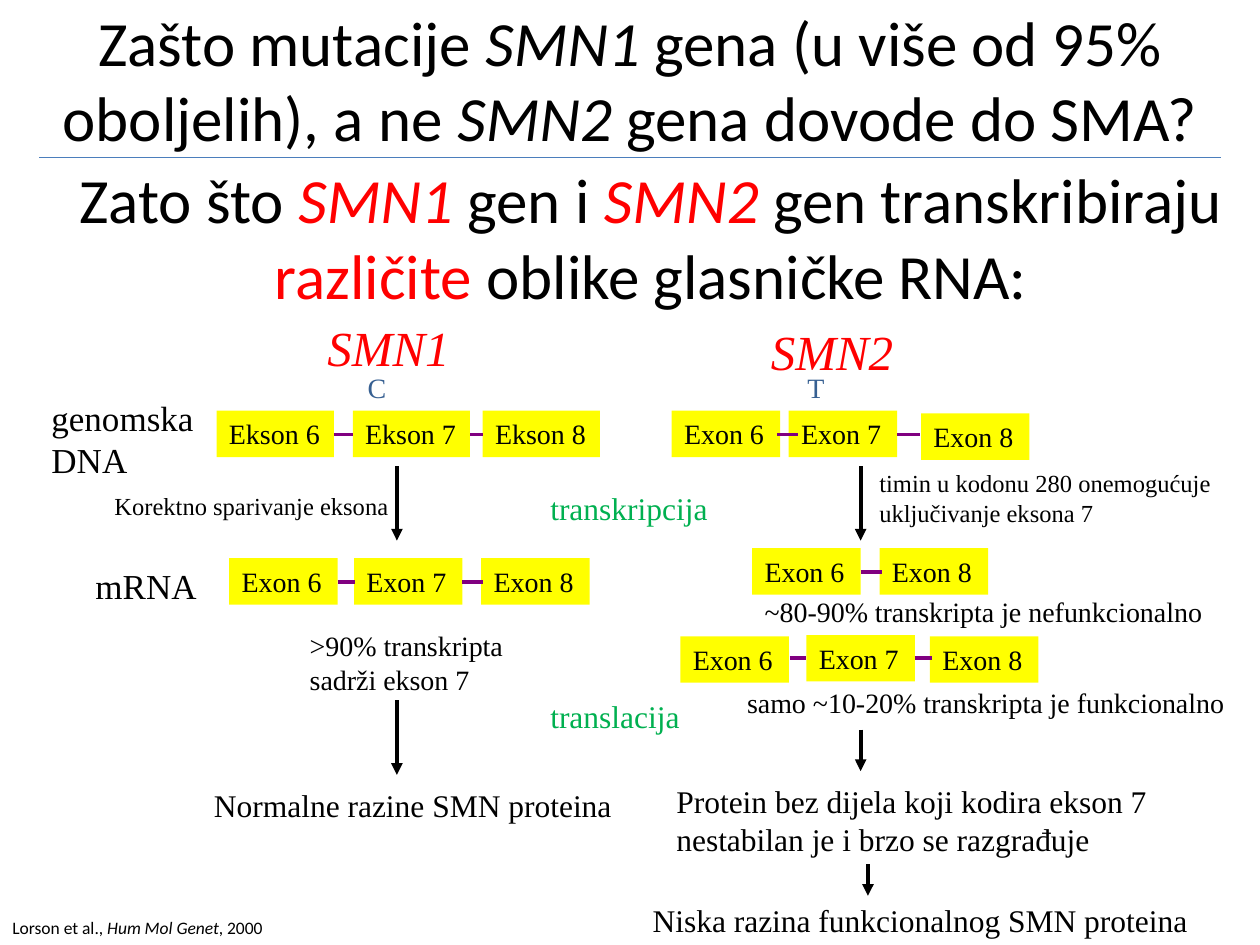
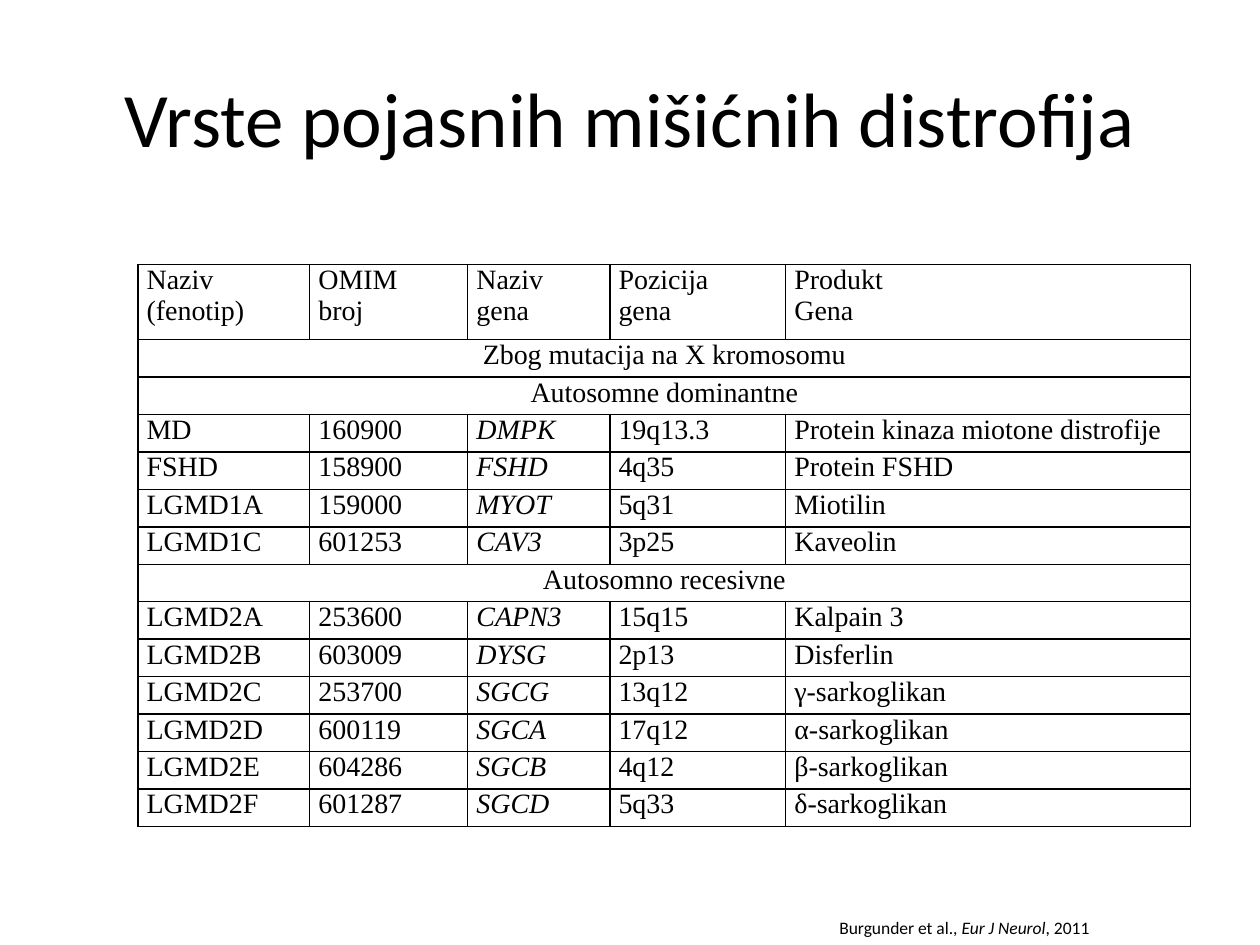
from lxml.etree import SubElement
from pptx import Presentation
from pptx.dml.color import RGBColor
from pptx.enum.shapes import MSO_CONNECTOR, MSO_SHAPE
from pptx.enum.text import MSO_ANCHOR, MSO_AUTO_SIZE, PP_ALIGN
from pptx.oxml.ns import qn
from pptx.util import Pt

BLACK = RGBColor(0x00, 0x00, 0x00)
INK = RGBColor(0x01, 0x02, 0x03)
RED = RGBColor(0xFF, 0x00, 0x00)
GREEN = RGBColor(0x00, 0xB0, 0x50)
BLUE = RGBColor(0x37, 0x60, 0x92)
RULE = RGBColor(0x4B, 0x7E, 0xBC)
PURPLE = RGBColor(0x80, 0x00, 0x80)
YELLOW = RGBColor(0xFF, 0xFF, 0x00)
SANS = "Calibri"
SERIF = "Times New Roman"
WIDE, HIGH = 720, 540
COLS = (98.2, 90.3, 81.2, 100.5, 231.5)
HEAD = ("Naziv\n(fenotip)", "OMIM\nbroj", "Naziv\ngena", "Pozicija\ngena", "Produkt\nGena")
ROWS = (
    HEAD,
    ("Zbog mutacija na X kromosomu",),
    ("Autosomne dominantne",),
    ("MD", "160900", "DMPK", "19q13.3", "Protein kinaza miotone distrofije"),
    ("FSHD", "158900", "FSHD", "4q35", "Protein FSHD"),
    ("LGMD1A", "159000", "MYOT", "5q31", "Miotilin"),
    ("LGMD1C", "601253", "CAV3", "3p25", "Kaveolin"),
    ("Autosomno recesivne",),
    ("LGMD2A", "253600", "CAPN3", "15q15", "Kalpain 3"),
    ("LGMD2B", "603009", "DYSG", "2p13", "Disferlin"),
    ("LGMD2C", "253700", "SGCG", "13q12", "γ-sarkoglikan"),
    ("LGMD2D", "600119", "SGCA", "17q12", "α-sarkoglikan"),
    ("LGMD2E", "604286", "SGCB", "4q12", "β-sarkoglikan"),
    ("LGMD2F", "601287", "SGCD", "5q33", "δ-sarkoglikan"),
)


def style(para, size, face, color=BLACK, align=PP_ALIGN.LEFT):
    """Set the font and alignment of a paragraph."""
    para.font.size = Pt(size)
    para.font.name = face
    para.font.color.rgb = color
    para.alignment = align


def label(slide, x, y, w, h, text, size, color=BLACK, wrap=False):
    """Add a serif label, one paragraph per line of text."""
    box = slide.shapes.add_textbox(Pt(x), Pt(y), Pt(w), Pt(h))
    frame = box.text_frame
    frame.word_wrap = wrap
    frame.auto_size = MSO_AUTO_SIZE.SHAPE_TO_FIT_TEXT
    frame.text = text
    for para in frame.paragraphs:
        style(para, size, SERIF, color)
    return box


def mixed(slide, x, y, w, h, parts, size, align=PP_ALIGN.LEFT, anchor=MSO_ANCHOR.TOP):
    """Add a sans paragraph made of (text, italic, color) parts."""
    frame = slide.shapes.add_textbox(Pt(x), Pt(y), Pt(w), Pt(h)).text_frame
    frame.word_wrap = True
    frame.vertical_anchor = anchor
    para = frame.paragraphs[0]
    style(para, size, SANS, align=align)
    for text, slant, color in parts:
        run = para.add_run()
        run.text = text
        run.font.italic = slant
        run.font.color.rgb = color


def title(slide, x, y, w, h, parts, size):
    """Add a centred heading."""
    mixed(slide, x, y, w, h, parts, size, PP_ALIGN.CENTER, MSO_ANCHOR.MIDDLE)


def cite(slide, x, author, paper, year):
    """Add the source note at the foot of the slide."""
    parts = ((f"{author} et al., ", False, BLACK), (paper, True, BLACK),
             (f", {year}", False, BLACK))
    mixed(slide, x, 520.5, 247.5, 19.5, parts, 10)


def line(slide, x1, y1, x2, y2, color, width=2.25):
    """Add a straight line without shadow."""
    link = slide.shapes.add_connector(
        MSO_CONNECTOR.STRAIGHT, Pt(x1), Pt(y1), Pt(x2), Pt(y2))
    link.line.color.rgb = color
    link.line.width = Pt(width)
    SubElement(link._element.spPr, qn("a:effectLst"))
    return link


def arrow(slide, x, top, end):
    """Add a black arrow that points down."""
    link = line(slide, x, top, x, end, BLACK)
    SubElement(link.line._get_or_add_ln(), qn("a:tailEnd"), type="triangle")


def exon(slide, x, y, w, name):
    """Add a yellow exon box."""
    box = slide.shapes.add_shape(MSO_SHAPE.RECTANGLE, Pt(x), Pt(y), Pt(w), Pt(26.6))
    box.shadow.inherit = False
    box.fill.solid()
    box.fill.fore_color.rgb = YELLOW
    box.line.fill.background()
    frame = box.text_frame
    frame.word_wrap = False
    frame.auto_size = MSO_AUTO_SIZE.SHAPE_TO_FIT_TEXT
    frame.vertical_anchor = MSO_ANCHOR.TOP
    frame.text = name
    style(frame.paragraphs[0], 16, SERIF, INK)


def chain(slide, x, y, w, exons, links, drop=13.6):
    """Add exons as (name, dx, dy) and the (start, end) links between them."""
    for name, dx, dy in exons:
        exon(slide, x + dx, y + dy, w, name)
    for start, end in links:
        line(slide, x + start, y + drop, x + end, y + drop, PURPLE)


def left(slide, x, y):
    """Draw the SMN1 path with its row labels."""
    gene = label(slide, x + 160, y, 85, 41, "SMN1", 28, RED)
    gene.text_frame.paragraphs[0].font.italic = True
    label(slide, x + 183, y + 30, 25, 26.6, "C", 16, BLUE)
    label(slide, x + 2.3, y + 45.2, 96.5, 55.4, "genomska\nDNA", 20)
    chain(slide, x, y + 56.7, 67,
          (("Ekson 6", 103.8, 0), ("Ekson 7", 181.6, 0), ("Ekson 8", 255.8, 0)),
          ((170.8, 181.6), (248.6, 255.8)))
    arrow(slide, x + 206.8, y + 88.4, y + 130.9)
    label(slide, x + 38.3, y + 99.2, 173, 24.5, "Korektno sparivanje eksona", 14)
    label(slide, x + 27.5, y + 141, 75, 31, "mRNA", 20)
    chain(slide, x, y + 141, 62,
          (("Exon 6", 111, 0), ("Exon 7", 182.3, 0), ("Exon 8", 255, 0)),
          ((173, 183), (244.2, 255.8)))
    label(slide, x + 149.9, y + 177.7, 126.7, 46, ">90% transkripta\nsadrži ekson 7", 16)
    arrow(slide, x + 206.8, y + 222.3, y + 264.8)
    label(slide, x + 95.2, y + 267.7, 244, 28.8, "Normalne razine SMN proteina", 18)


def right(slide, x, y):
    """Draw the SMN2 path."""
    gene = label(slide, x + 73.4, y + 2, 85, 41, "SMN2", 28, RED)
    gene.text_frame.paragraphs[0].font.italic = True
    label(slide, x + 94.3, y + 30, 48, 26.6, "T", 16, BLUE)
    chain(slide, x, y + 56.7, 62,
          (("Exon 6", 23.8, 0), ("Exon 7", 90.7, 0), ("Exon 8", 166.3, 1.5)),
          ((84.2, 95.8), (152.6, 165.6)))
    arrow(slide, x + 131.8, y + 88.4, y + 130.9)
    label(slide, x + 135.4, y + 86.2, 221, 41,
          "timin u kodonu 280 onemogućuje uključivanje eksona 7", 14, wrap=True)
    chain(slide, x, y + 135.2, 62,
          (("Exon 6", 69.8, 0), ("Exon 8", 142.6, 0)), ((131.8, 144),))
    label(slide, x + 69.8, y + 158.2, 275, 26.6,
          "~80-90% transkripta je nefunkcionalno", 16)
    chain(slide, x, y + 185.6, 62,
          (("Exon 6", 28.8, 0), ("Exon 7", 100.8, -0.7), ("Exon 8", 171.4, 0)),
          ((91.4, 100.8), (162.7, 172.8)), 12.2)
    label(slide, x + 59.8, y + 210, 291.6, 26.6,
          "samo ~10-20% transkripta je funkcionalno", 16)
    arrow(slide, x + 131.8, y + 238.9, y + 262.6)
    label(slide, x + 19.4, y + 265.5, 289.4, 51,
          "Protein bez dijela koji kodira ekson 7\nnestabilan je i brzo se razgrađuje", 18)
    arrow(slide, x + 136, y + 315.9, y + 333.9)
    label(slide, x + 5.8, y + 333.2, 323.3, 28.8,
          "Niska razina funkcionalnog SMN proteina", 18)


def steps(slide, x, y):
    """Name the two steps between the paths."""
    label(slide, x, y, 105, 28.8, "transkripcija", 18, GREEN)
    label(slide, x, y + 118.8, 89.3, 28.8, "translacija", 18, GREEN)


def genes(slide):
    """Build the slide that compares SMN1 and SMN2."""
    title(slide, 0, 0, WIDE, 90, (
        ("Zašto mutacije ", False, BLACK), ("SMN1", True, BLACK),
        (" gena (u više od 95% oboljelih), a ne ", False, BLACK),
        ("SMN2", True, BLACK), (" gena dovode do SMA?", False, BLACK)), 36)
    title(slide, 12, 90, WIDE, 90, (
        ("Zato što ", False, BLACK), ("SMN1", True, RED), (" gen i ", False, BLACK),
        ("SMN2", True, RED), (" gen transkribiraju ", False, BLACK),
        ("različite", False, RED), (" oblike glasničke RNA:", False, BLACK)), 36)
    line(slide, 22.5, 90, 697.5, 90, RULE, 0.75)
    left(slide, 20, 178)
    right(slide, 360, 178)
    steps(slide, 307.4, 275.8)
    cite(slide, 0, "Lorson", "Hum Mol Genet", 2000)


def edge(cell):
    """Give a cell black borders and no fill."""
    props = cell._tc.get_or_add_tcPr()
    for side in ("lnL", "lnR", "lnT", "lnB"):
        ln = SubElement(props, qn(f"a:{side}"), w=str(Pt(1)))
        fill = SubElement(ln, qn("a:solidFill"))
        SubElement(fill, qn("a:srgbClr"), val=str(BLACK))
    cell.fill.background()


def grid(slide, x, y, w, h):
    """Add the table of dystrophies."""
    table = slide.shapes.add_table(
        len(ROWS), len(COLS), Pt(x), Pt(y), Pt(w), Pt(h)).table
    table.first_row = table.horz_banding = False
    for col, width in zip(table.columns, COLS):
        col.width = Pt(width)
    unit = h / (len(ROWS) + 1)
    for r, texts in enumerate(ROWS):
        table.rows[r].height = Pt(unit if r else 2 * unit)
        for cell in table.rows[r].cells:
            cell.margin_left = cell.margin_right = Pt(5)
            cell.margin_top = cell.margin_bottom = 0
            edge(cell)
        band = len(texts) == 1
        if band:
            table.cell(r, 0).merge(table.cell(r, len(COLS) - 1))
        for c, text in enumerate(texts):
            frame = table.cell(r, c).text_frame
            frame.text = text
            align = PP_ALIGN.CENTER if band else PP_ALIGN.JUSTIFY
            if r == 0 and c:
                align = PP_ALIGN.LEFT
            for para in frame.paragraphs:
                style(para, 16, SERIF, align=align)
                para.font.italic = r > 0 and c == 2


def types(slide):
    """Build the slide with the table of dystrophies."""
    title(slide, 36, 21.6, 648, 90,
          (("Vrste pojasnih mišićnih distrofija", False, BLACK),), 44)
    grid(slide, 78.8, 151.2, sum(COLS), 321.3)
    cite(slide, 472.5, "Burgunder", "Eur J Neurol", 2011)


def main():
    """Build and save the deck."""
    deck = Presentation()
    deck.slide_width, deck.slide_height = Pt(WIDE), Pt(HIGH)
    for build in (genes, types):
        build(deck.slides.add_slide(deck.slide_layouts[6]))
    deck.save("out.pptx")


if __name__ == "__main__":
    main()
